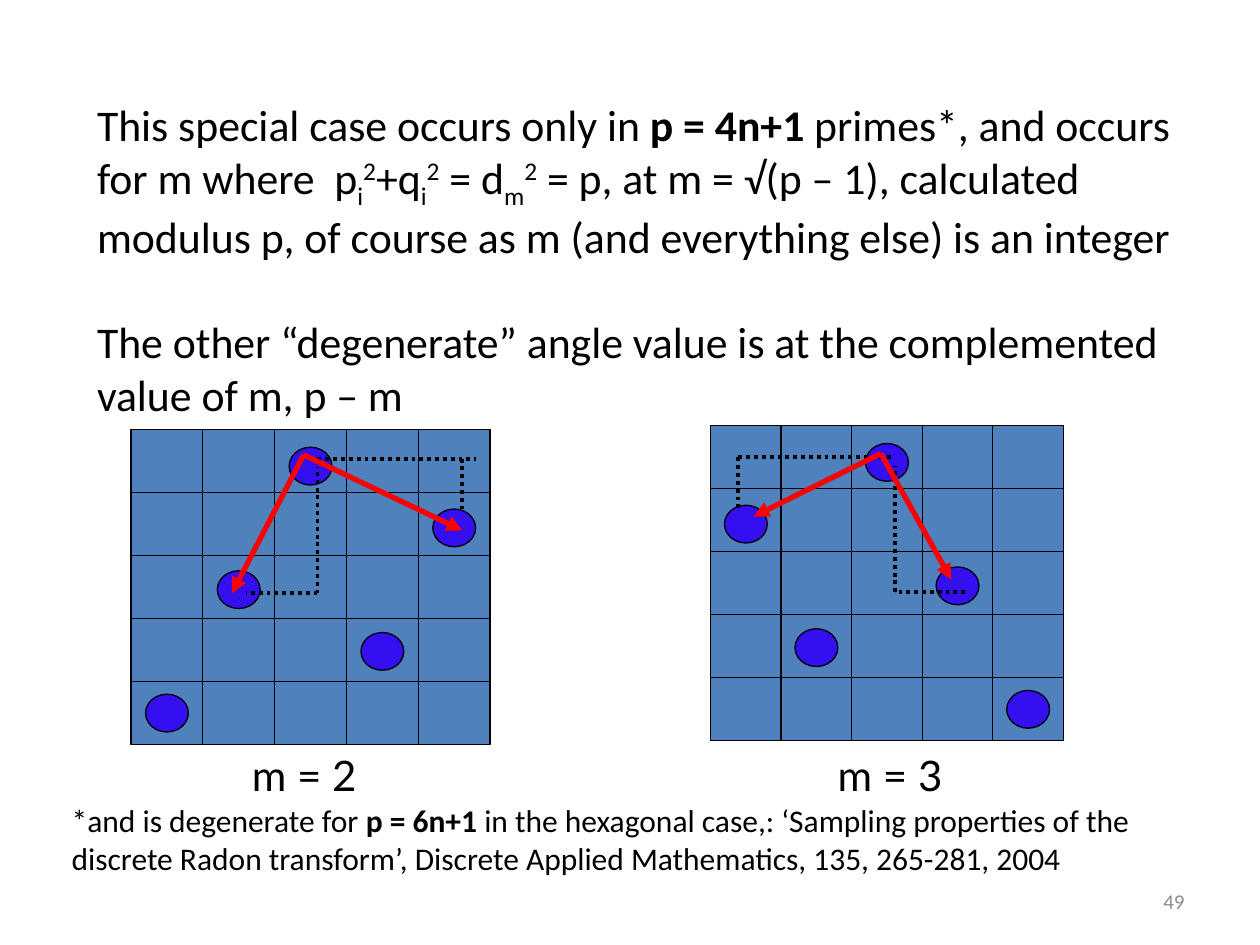
from dataclasses import dataclass
from itertools import product

from lxml import etree
from pptx import Presentation
from pptx.dml.color import RGBColor
from pptx.enum.dml import MSO_LINE
from pptx.enum.shapes import MSO_CONNECTOR, MSO_SHAPE
from pptx.enum.text import MSO_ANCHOR, MSO_AUTO_SIZE, PP_ALIGN
from pptx.oxml.ns import qn
from pptx.util import Inches, Pt

RECTANGLE, OVAL = MSO_SHAPE.RECTANGLE, MSO_SHAPE.OVAL
STRAIGHT = MSO_CONNECTOR.STRAIGHT
DOTTED = MSO_LINE.ROUND_DOT
MIDDLE, TOP = MSO_ANCHOR.MIDDLE, MSO_ANCHOR.TOP
LEFT, RIGHT = PP_ALIGN.LEFT, PP_ALIGN.RIGHT
NO_FIT = MSO_AUTO_SIZE.NONE

PRIME = 5
START_COLUMN = 2
ROW_HEIGHT = 0.5
DOT_STEP = 0.49
DOT_WIDTH, DOT_HEIGHT = 0.34, 0.3
DOT_DROP = 0.14
BLACK, CELL_BLUE, DOT_BLUE, RED, GREY = "000000", "4F81BD", "340FEF", "FF0000", "8C8C8C"

Point = tuple[float, float]
Box = tuple[float, float, float, float]


@dataclass(frozen=True)
class Span:
    text: str
    bold: bool = False
    baseline: int = 0


@dataclass(frozen=True)
class Lattice:
    m: int
    left: float
    top: float
    cell_width: float
    origin: Point
    targets: tuple[Point, ...]
    legs: tuple[tuple[Point, Point], ...]
    label: Box


SPECIAL_CASE = (
    Span("This special case occurs only in "),
    Span("p = 4n+1 ", bold=True),
    Span("primes*, and occurs for m where  p"),
    Span("i", baseline=-25),
    Span("2", baseline=30),
    Span("+q"),
    Span("i", baseline=-25),
    Span("2", baseline=30),
    Span(" = d"),
    Span("m", baseline=-25),
    Span("2", baseline=30),
    Span(" = p, at m = √(p – 1), calculated modulus p, "
         "of course as m (and everything else) is an integer"),
)
COMPLEMENT = (
    Span("The other “degenerate” angle value is at the complemented value of m, p – m"),
)
FOOTNOTE = (
    Span("*and is degenerate for "),
    Span("p = 6n+1 ", bold=True),
    Span("in the hexagonal case,: ‘Sampling properties of the discrete Radon transform’, "
         "Discrete Applied Mathematics, 135, 265-281, 2004"),
)
LATTICES = (
    Lattice(2, 1.04, 3.41, 0.57, (2.41, 3.61), ((3.67, 4.21), (1.84, 4.71)),
            (((2.52, 3.64), (3.78, 3.64)), ((3.67, 3.64), (3.67, 4.04)),
             ((2.52, 4.71), (2.52, 3.71)), ((2.52, 4.71), (1.95, 4.71))),
            (1.9, 5.9, 1.83, 0.63)),
    Lattice(3, 5.64, 3.38, 0.56, (6.99, 3.6), ((5.98, 4.1), (7.55, 4.6)),
            (((5.86, 3.63), (7.1, 3.63)), ((5.86, 3.63), (5.86, 4.04)),
             ((7.1, 4.7), (7.1, 3.7)), ((7.66, 4.7), (7.1, 4.7))),
            (6.55, 5.9, 1.79, 0.64)),
)


def color(value: str) -> RGBColor:
    return RGBColor.from_string(value)


def write(frame, paragraphs: tuple[tuple[Span, ...], ...], size: float,
          font: str = "Calibri", ink: str = BLACK, align=LEFT, anchor=TOP,
          gap: float = 0) -> None:
    frame.word_wrap = True
    frame.auto_size = NO_FIT
    frame.vertical_anchor = anchor
    for index, spans in enumerate(paragraphs):
        paragraph = frame.add_paragraph() if index else frame.paragraphs[0]
        paragraph.alignment = align
        paragraph.space_before = Pt(gap if index else 0)
        for span in spans:
            run = paragraph.add_run()
            run.text = span.text
            run.font.name = font
            run.font.size = Pt(size)
            run.font.bold = span.bold
            run.font.color.rgb = color(ink)
            if span.baseline:
                run.font._element.set("baseline", str(span.baseline * 1000))


def add_text(shapes, box: Box, spans: tuple[Span, ...], size: float, **style) -> None:
    frame = shapes.add_textbox(*map(Inches, box)).text_frame
    write(frame, (spans,), size, **style)


def add_outlined(shapes, kind, box: Box, fill: str) -> None:
    shape = shapes.add_shape(kind, *map(Inches, box))
    shape.shadow.inherit = False
    shape.fill.solid()
    shape.fill.fore_color.rgb = color(fill)
    shape.line.color.rgb = color(BLACK)
    shape.line.width = Pt(0.75)


def add_line(shapes, start: Point, end: Point, ink: str, width: float,
             dotted: bool = False, arrow: bool = False) -> None:
    connector = shapes.add_connector(STRAIGHT, *map(Inches, start + end))
    connector.line.color.rgb = color(ink)
    connector.line.width = Pt(width)
    if dotted:
        connector.line.dash_style = DOTTED
    properties = connector._element.spPr
    if arrow:
        etree.SubElement(properties.find(qn("a:ln")), qn("a:tailEnd"), type="triangle")
    etree.SubElement(properties, qn("a:effectLst"))


def draw_lattice(slide, lattice: Lattice) -> None:
    shapes = slide.shapes.add_group_shape().shapes
    width = lattice.cell_width
    for row, column in product(range(PRIME), repeat=2):
        cell = (lattice.left + column * width, lattice.top + row * ROW_HEIGHT,
                width, ROW_HEIGHT)
        add_outlined(shapes, RECTANGLE, cell, CELL_BLUE)
    for row in range(PRIME):
        column = (START_COLUMN + row * lattice.m) % PRIME
        dot = (lattice.left + column * width + (width - DOT_WIDTH) / 2,
               lattice.top + DOT_DROP + row * DOT_STEP, DOT_WIDTH, DOT_HEIGHT)
        add_outlined(shapes, OVAL, dot, DOT_BLUE)
    for start, end in lattice.legs:
        add_line(shapes, start, end, BLACK, 2.25, dotted=True)
    for target in lattice.targets:
        add_line(shapes, lattice.origin, target, RED, 3, arrow=True)
    add_text(shapes, lattice.label, (Span(f"m = {lattice.m}"),), 24, font="Lato")


def main() -> None:
    presentation = Presentation()
    presentation.slide_width, presentation.slide_height = Inches(10), Inches(7.5)
    slide = presentation.slides.add_slide(presentation.slide_layouts[5])

    title = slide.shapes.title
    title.left, title.top = Inches(0.67), Inches(0.4)
    title.width, title.height = Inches(8.81), Inches(3.31)
    write(title.text_frame, (SPECIAL_CASE, COMPLEMENT), 25, anchor=MIDDLE, gap=30)

    for lattice in LATTICES:
        draw_lattice(slide, lattice)

    add_text(slide.shapes, (7.17, 6.95, 2.33, 0.4), (Span("49"),), 12,
             ink=GREY, align=RIGHT, anchor=MIDDLE)
    add_text(slide.shapes, (0.47, 6.31, 8.61, 0.71), FOOTNOTE, 18)
    presentation.save("out.pptx")


if __name__ == "__main__":
    main()
